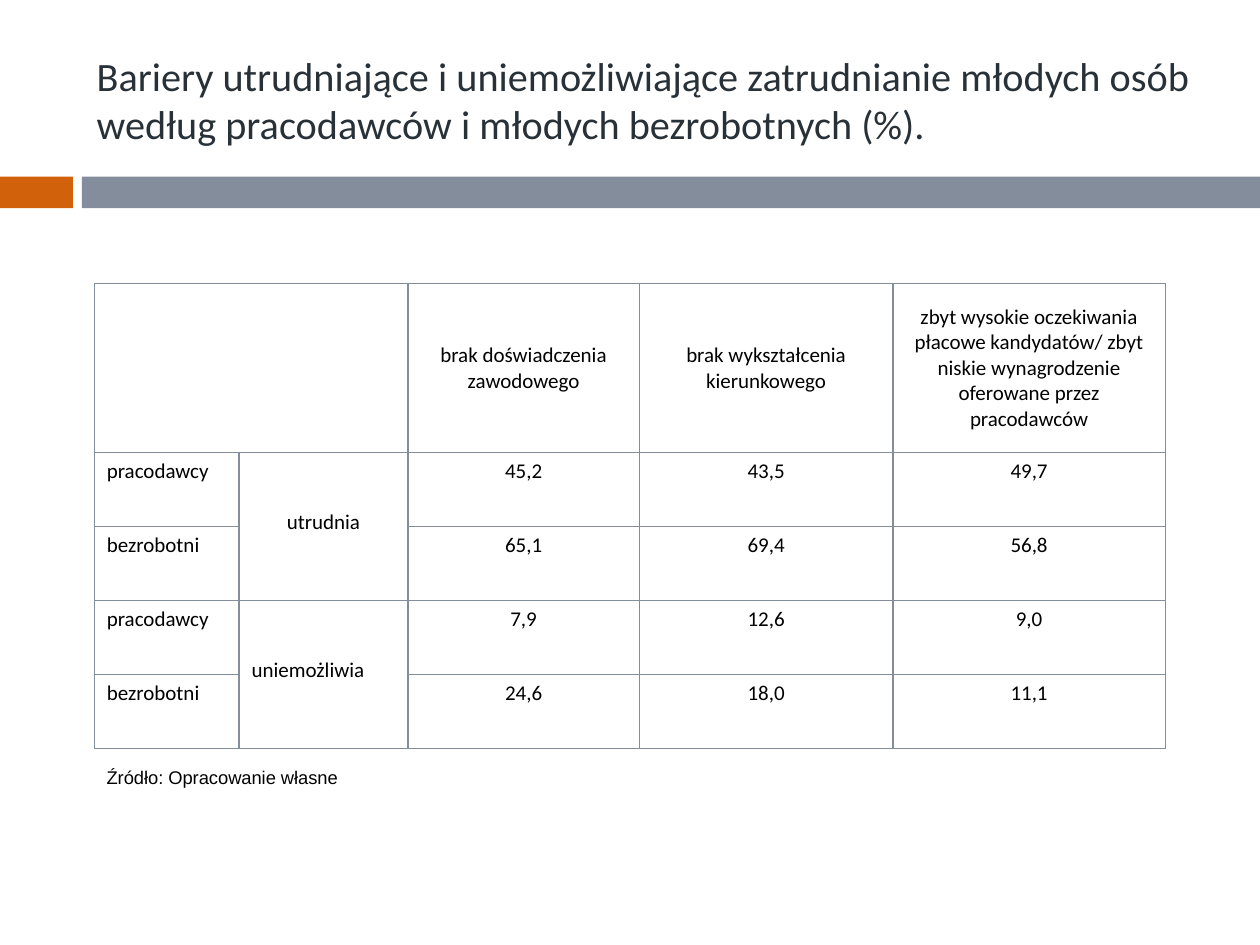
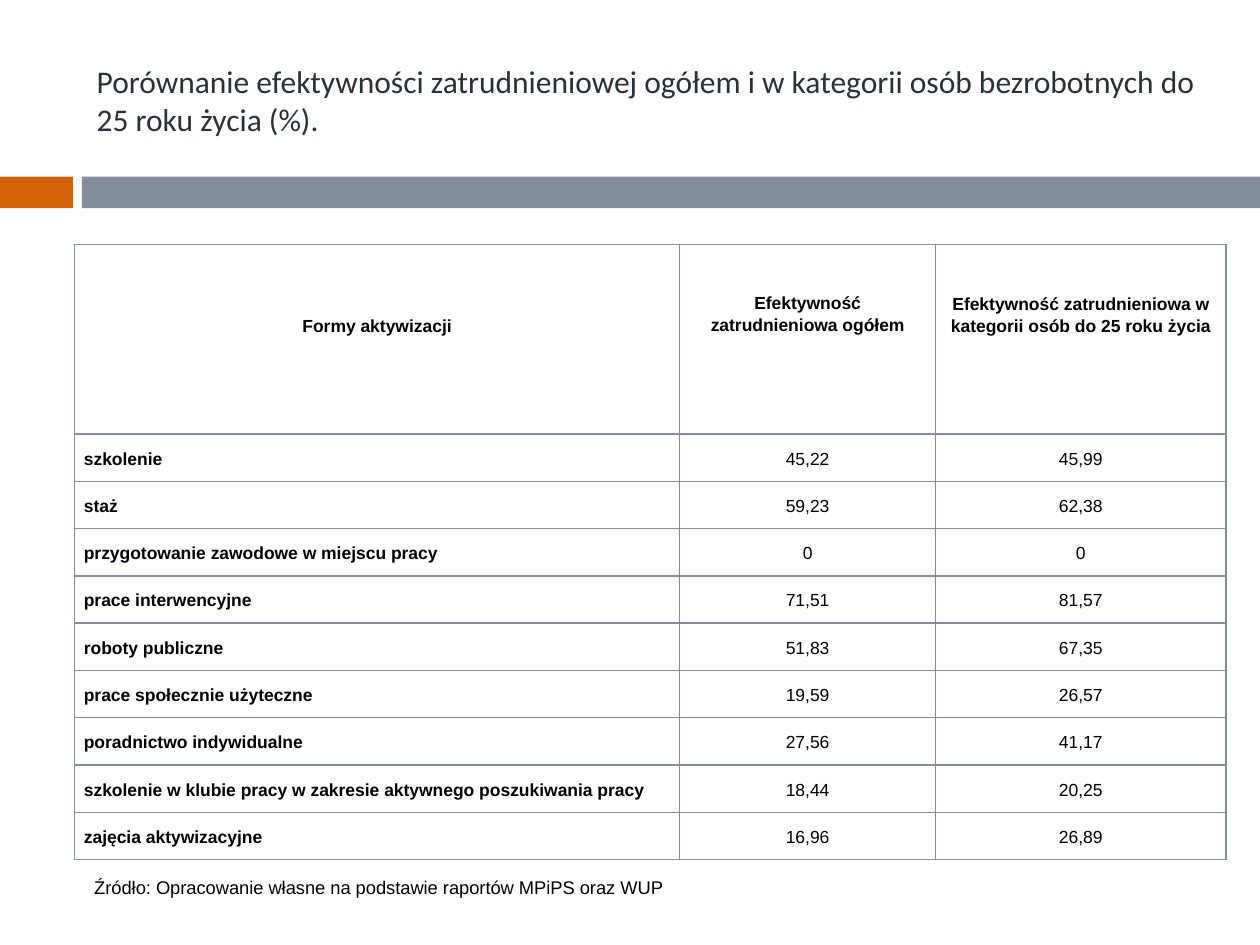
from dataclasses import dataclass
from typing import NamedTuple

from lxml import etree
from pptx import Presentation
from pptx.dml.color import RGBColor
from pptx.enum.shapes import MSO_SHAPE
from pptx.enum.text import MSO_ANCHOR, PP_ALIGN
from pptx.oxml.ns import qn
from pptx.util import Cm, Pt

RECTANGLE = MSO_SHAPE.RECTANGLE
TOP, MIDDLE = MSO_ANCHOR.TOP, MSO_ANCHOR.MIDDLE
LEFT, CENTER = PP_ALIGN.LEFT, PP_ALIGN.CENTER


@dataclass(frozen=True)
class Theme:
    accent: str = "D2610C"
    band: str = "838D9B"
    title: str = "283138"
    text: str = "000000"
    heading_font: str = "Calibri"
    body_font: str = "Arial"
    barriers_size: float = 12
    effectiveness_size: float = 10
    source_size: float = 10.5
    border_width: float = 1


class Box(NamedTuple):
    """A region of the slide, in centimetres."""
    left: float
    top: float
    width: float
    height: float

    def lengths(self):
        return [Cm(value) for value in self]


THEME = Theme()
SLIDE = Box(0, 0, 25.4, 19.05)
TITLE_BOX = Box(1.7, 0.64, 22.66, 2.74)
BAND_BOX = Box(0, 3.56, SLIDE.width, 0.64)
ACCENT_WIDTH, BAND_GAP = 1.47, 0.18

BARRIER_COLUMNS = [2.92, 3.4, 4.67, 5.11, 5.49]
BARRIERS = [
    "brak doświadczenia zawodowego",
    "brak wykształcenia kierunkowego",
    "zbyt wysokie oczekiwania płacowe kandydatów/ zbyt niskie wynagrodzenie "
    "oferowane przez pracodawców",
]
BARRIER_GROUPS = [
    ("utrudnia", CENTER, [("pracodawcy", "45,2", "43,5", "49,7"),
                          ("bezrobotni", "65,1", "69,4", "56,8")]),
    ("uniemożliwia", LEFT, [("pracodawcy", "7,9", "12,6", "9,0"),
                            ("bezrobotni", "24,6", "18,0", "11,1")]),
]

EFFECTIVENESS_COLUMNS = [12.2, 5.16, 5.85]
EFFECTIVENESS_HEADERS = [
    ("Formy aktywizacji", 1.4),
    ("Efektywność zatrudnieniowa ogółem", 0.93),
    ("Efektywność zatrudnieniowa w kategorii osób do 25 roku życia", 0.95),
]
EFFECTIVENESS = [
    ("szkolenie", "45,22", "45,99"),
    ("staż", "59,23", "62,38"),
    ("przygotowanie zawodowe w miejscu pracy", "0", "0"),
    ("prace interwencyjne", "71,51", "81,57"),
    ("roboty publiczne", "51,83", "67,35"),
    ("prace społecznie użyteczne", "19,59", "26,57"),
    ("poradnictwo indywidualne", "27,56", "41,17"),
    ("szkolenie w klubie pracy w zakresie aktywnego poszukiwania pracy",
     "18,44", "20,25"),
    ("zajęcia aktywizacyjne", "16,96", "26,89"),
]


def set_attributes(target, values):
    for name, value in values.items():
        setattr(target, name, value)


def write(frame, text, font, size, color=THEME.text, bold=False,
          alignment=LEFT, line_spacing=1.0):
    paragraph = frame.paragraphs[0]
    set_attributes(paragraph, {"alignment": alignment, "line_spacing": line_spacing})
    run = paragraph.add_run()
    run.text = text
    set_attributes(run.font, {"name": font, "size": Pt(size), "bold": bold})
    run.font.color.rgb = RGBColor.from_string(color)


def add_text(slide, box, text, anchor=TOP, **style):
    frame = slide.shapes.add_textbox(*box.lengths()).text_frame
    set_attributes(frame, {"word_wrap": True, "vertical_anchor": anchor})
    write(frame, text, **style)


def add_source(slide, box, text):
    add_text(slide, box, text, font=THEME.body_font, size=THEME.source_size)


def add_band(slide, box):
    band_left = box.left + ACCENT_WIDTH + BAND_GAP
    parts = [
        (box._replace(width=ACCENT_WIDTH), THEME.accent),
        (box._replace(left=band_left, width=box.width - band_left), THEME.band),
    ]
    for part, color in parts:
        shape = slide.shapes.add_shape(RECTANGLE, *part.lengths())
        shape.shadow.inherit = False
        shape.fill.solid()
        shape.fill.fore_color.rgb = RGBColor.from_string(color)
        shape.line.fill.background()


def add_titled_slide(presentation, title, size):
    slide = presentation.slides.add_slide(presentation.slide_layouts[6])
    add_band(slide, BAND_BOX)
    add_text(slide, TITLE_BOX, title, anchor=MIDDLE, font=THEME.heading_font,
             size=size, color=THEME.title)
    return slide


def outline_cell(cell):
    properties = cell._tc.get_or_add_tcPr()
    for side in ("a:lnL", "a:lnR", "a:lnT", "a:lnB"):
        line = etree.SubElement(properties, qn(side), w=str(Pt(THEME.border_width)))
        fill = etree.SubElement(line, qn("a:solidFill"))
        etree.SubElement(fill, qn("a:srgbClr"), val=THEME.band)


def add_plain_table(slide, box, columns, row_count, header_height):
    """Add an outlined, unfilled table whose rows below the header are equal."""
    table = slide.shapes.add_table(row_count, len(columns), *box.lengths()).table
    set_attributes(table, {"first_row": False, "horz_banding": False})
    for column, width in zip(table.columns, columns):
        column.width = Cm(width)
    row_height = (box.height - header_height) / (row_count - 1)
    for index, row in enumerate(table.rows):
        row.height = Cm(row_height if index else header_height)
    for cell in table.iter_cells():
        outline_cell(cell)
        cell.fill.background()
    return table


def fill_cell(cell, text, cell_format, **style):
    set_attributes(cell, cell_format)
    write(cell.text_frame, text, **style)


def add_barriers_table(slide, box):
    style = {"font": THEME.heading_font, "size": THEME.barriers_size}
    table = add_plain_table(slide, box, BARRIER_COLUMNS, 5, 3.4)
    table.cell(0, 0).merge(table.cell(0, 1))
    for column, barrier in enumerate(BARRIERS, start=2):
        fill_cell(table.cell(0, column), barrier, {"vertical_anchor": MIDDLE},
                  alignment=CENTER, **style)
    for group, (effect, alignment, rows) in enumerate(BARRIER_GROUPS):
        first_row = 1 + group * len(rows)
        effect_cell = table.cell(first_row, 1)
        effect_cell.merge(table.cell(first_row + len(rows) - 1, 1))
        fill_cell(effect_cell, effect,
                  {"vertical_anchor": MIDDLE, "margin_bottom": Cm(0.29)},
                  alignment=alignment, **style)
        for row, (respondent, *values) in enumerate(rows, start=first_row):
            fill_cell(table.cell(row, 0), respondent, {}, **style)
            for column, value in enumerate(values, start=2):
                fill_cell(table.cell(row, column), value, {}, alignment=CENTER, **style)


def add_effectiveness_table(slide, box):
    style = {"font": THEME.body_font, "size": THEME.effectiveness_size,
             "line_spacing": 1.15}
    margins = {"margin_left": Cm(0.19), "margin_right": Cm(0.19),
               "margin_top": 0, "margin_bottom": 0}
    table = add_plain_table(slide, box, EFFECTIVENESS_COLUMNS,
                            len(EFFECTIVENESS) + 1, 3.82)
    for column, (header, space_above) in enumerate(EFFECTIVENESS_HEADERS):
        fill_cell(table.cell(0, column), header,
                  {**margins, "margin_top": Cm(space_above)},
                  bold=True, alignment=CENTER, **style)
    for row, values in enumerate(EFFECTIVENESS, start=1):
        for column, value in enumerate(values):
            is_label = column == 0
            fill_cell(table.cell(row, column), value,
                      {**margins, "vertical_anchor": MIDDLE}, bold=is_label,
                      alignment=LEFT if is_label else CENTER, **style)


def add_barriers_slide(presentation):
    slide = add_titled_slide(
        presentation,
        "Bariery utrudniające i uniemożliwiające zatrudnianie młodych osób "
        "według pracodawców i młodych bezrobotnych (%).", 23)
    add_barriers_table(slide, Box(1.9, 5.72, sum(BARRIER_COLUMNS), 9.37))
    add_source(slide, Box(1.9, 15.32, 5.4, 0.71), "Źródło: Opracowanie własne")


def add_effectiveness_slide(presentation):
    slide = add_titled_slide(
        presentation,
        "Porównanie efektywności zatrudnieniowej ogółem i w kategorii osób "
        "bezrobotnych do 25 roku życia (%).", 18)
    add_effectiveness_table(slide, Box(1.5, 4.93, sum(EFFECTIVENESS_COLUMNS), 12.4))
    add_source(slide, Box(1.65, 17.53, 12.2, 0.71),
               "Źródło: Opracowanie własne na podstawie raportów MPiPS oraz WUP")


def main():
    presentation = Presentation()
    set_attributes(presentation, {"slide_width": Cm(SLIDE.width),
                                  "slide_height": Cm(SLIDE.height)})
    add_barriers_slide(presentation)
    add_effectiveness_slide(presentation)
    presentation.save("out.pptx")


if __name__ == "__main__":
    main()
